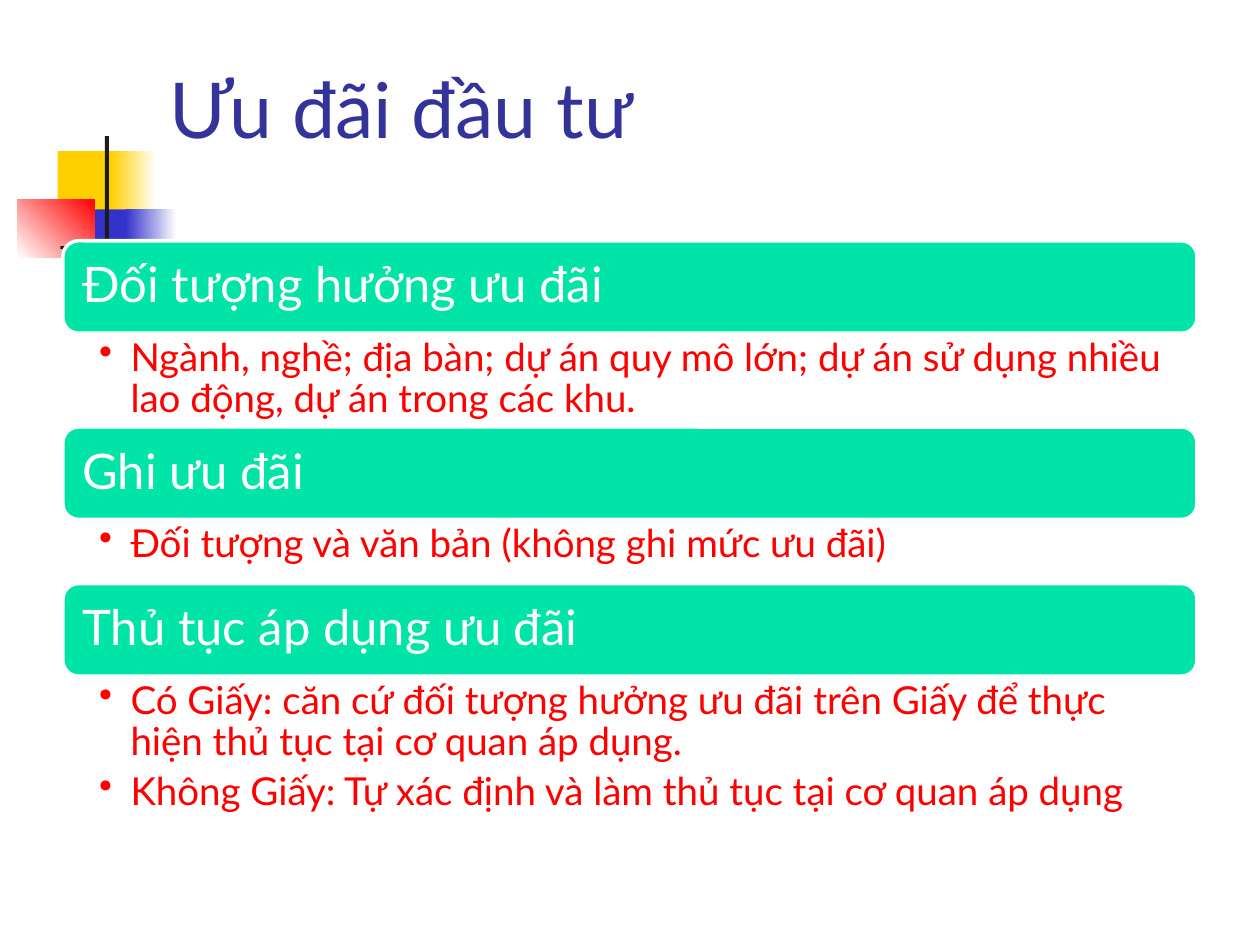
import dataclasses

import lxml.etree
import pptx
import pptx.dml.color
import pptx.enum.shapes
import pptx.enum.text
import pptx.oxml.ns
import pptx.util

Pt = pptx.util.Pt
RGB = pptx.dml.color.RGBColor.from_string
SHAPE = pptx.enum.shapes.MSO_SHAPE
ANCHOR = pptx.enum.text.MSO_ANCHOR


@dataclasses.dataclass(frozen=True)
class Theme:
    """Colours, font and type sizes of the slide."""
    font: str = "Lato"
    title: str = "333399"
    heading: str = "FFFFFF"
    detail: str = "FF0000"
    band: str = "00E4A8"
    paper: str = "FFFFFF"
    yellow: str = "FFCF01"
    blue: str = "3333CC"
    red: str = "FF0000"
    ink: str = "1C1C1C"
    title_size: int = 44
    heading_size: int = 28
    detail_size: int = 22


THEME = Theme()

SECTIONS = [
    ("Đối tượng hưởng ưu đãi", 53.6, [
        "Ngành, nghề; địa bàn; dự án quy mô lớn; dự án sử dụng nhiều lao động, dự án trong các khu.",
    ]),
    ("Ghi ưu đãi", 36.7, [
        "Đối tượng và văn bản (không ghi mức ưu đãi)",
    ]),
    ("Thủ tục áp dụng ưu đãi", 84, [
        "Có Giấy: căn cứ đối tượng hưởng ưu đãi trên Giấy để thực hiện thủ tục tại cơ quan áp dụng.",
        "Không Giấy: Tự xác định và làm thủ tục tại cơ quan áp dụng",
    ]),
]


def points(*lengths):
    """Turn plain numbers into point lengths."""
    return [Pt(length) for length in lengths]


def set_margins(frame, left, top, right, bottom):
    """Set the four insets of a text frame in points."""
    frame.margin_left, frame.margin_top, frame.margin_right, frame.margin_bottom = points(
        left, top, right, bottom)


def style_text(paragraph, size, color):
    """Format every run of a paragraph."""
    for run in paragraph.runs:
        run.font.name = THEME.font
        run.font.size = Pt(size)
        run.font.color.rgb = RGB(color)


def add_bullet(paragraph, indent):
    """Give a paragraph a hanging bullet."""
    properties = paragraph._p.get_or_add_pPr()
    properties.set("marL", str(Pt(indent)))
    properties.set("indent", str(-Pt(indent)))
    bullet = lxml.etree.SubElement(properties, pptx.oxml.ns.qn("a:buChar"))
    bullet.set("char", "•")


def add_block(slide, box, colors, angle=0):
    """Draw a borderless rectangle in one colour or a gradient of two."""
    block = slide.shapes.add_shape(SHAPE.RECTANGLE, *points(*box))
    block.shadow.inherit = False
    block.line.fill.background()
    if len(colors) == 1:
        block.fill.solid()
        block.fill.fore_color.rgb = RGB(colors[0])
        return
    block.fill.gradient()
    block.fill.gradient_angle = angle
    for position, (stop, color) in enumerate(zip(block.fill.gradient_stops, colors)):
        stop.color.rgb = RGB(color)
        stop.position = position


def add_ornament(slide, left, top):
    """Draw the coloured blocks and crossing rules beside the title."""
    blocks = [
        ((23, 8.6, 34.8, 37.4), [THEME.yellow], 0),
        ((53.4, 8.6, 25.9, 37.4), [THEME.yellow, THEME.paper], 0),
        ((32.4, 41.8, 33.1, 37.4), [THEME.blue], 0),
        ((62, 41.8, 28.8, 37.4), [THEME.blue, THEME.paper], 0),
        ((0, 36, 43.9, 33.1), [THEME.paper, THEME.red], 45),
        ((49.9, 0, 2.3, 82.8), [THEME.ink], 0),
        ((24.5, 62.6, 648, 2.2), [THEME.ink, THEME.paper], 0),
    ]
    for (x, y, width, height), colors, angle in blocks:
        add_block(slide, (left + x, top + y, width, height), colors, angle)


def add_title(slide, box, wording):
    """Place the slide title at the bottom of its box."""
    frame = slide.shapes.add_textbox(*points(*box)).text_frame
    frame.word_wrap = True
    frame.vertical_anchor = ANCHOR.BOTTOM
    frame.text = wording
    style_text(frame.paragraphs[0], THEME.title_size, THEME.title)


def add_heading(slide, box, wording):
    """Place a rounded band that carries a section heading."""
    band = slide.shapes.add_shape(SHAPE.ROUNDED_RECTANGLE, *points(*box))
    band.shadow.inherit = False
    band.fill.solid()
    band.fill.fore_color.rgb = RGB(THEME.band)
    band.line.color.rgb = RGB(THEME.paper)
    band.line.width = Pt(2)
    frame = band.text_frame
    set_margins(frame, 8.6, 8.6, 8.6, 8.6)
    frame.vertical_anchor = ANCHOR.MIDDLE
    frame.text = wording
    heading = frame.paragraphs[0]
    heading.alignment = pptx.enum.text.PP_ALIGN.LEFT
    heading.line_spacing = 0.9
    style_text(heading, THEME.heading_size, THEME.heading)


def add_details(slide, box, details):
    """Place the bulleted details of a section."""
    frame = slide.shapes.add_textbox(*points(*box)).text_frame
    frame.word_wrap = True
    set_margins(frame, 20.6, 2.8, 15.6, 2.8)
    frame.text = "\n".join(details)
    for detail in frame.paragraphs:
        detail.level = 1
        detail.line_spacing = 0.9
        detail.space_after = Pt(4.6)
        add_bullet(detail, 18)
        style_text(detail, THEME.detail_size, THEME.detail)


def add_sections(slide, left, top, width, band_height=52.8):
    """Stack each heading band and its details down the slide."""
    for heading, details_height, details in SECTIONS:
        add_heading(slide, (left, top, width, band_height), heading)
        top += band_height
        add_details(slide, (left, top, width, details_height), details)
        top += details_height


def main():
    """Build the slide and save it."""
    deck = pptx.Presentation()
    deck.slide_width, deck.slide_height = points(720, 540)
    slide = deck.slides.add_slide(deck.slide_layouts[6])
    add_ornament(slide, 10, 77.8)
    add_title(slide, (90, -23.8, 613.4, 115.2), "Ưu đãi đầu tư")
    add_sections(slide, 36, 137.6, 648)
    deck.save("out.pptx")


if __name__ == "__main__":
    main()
